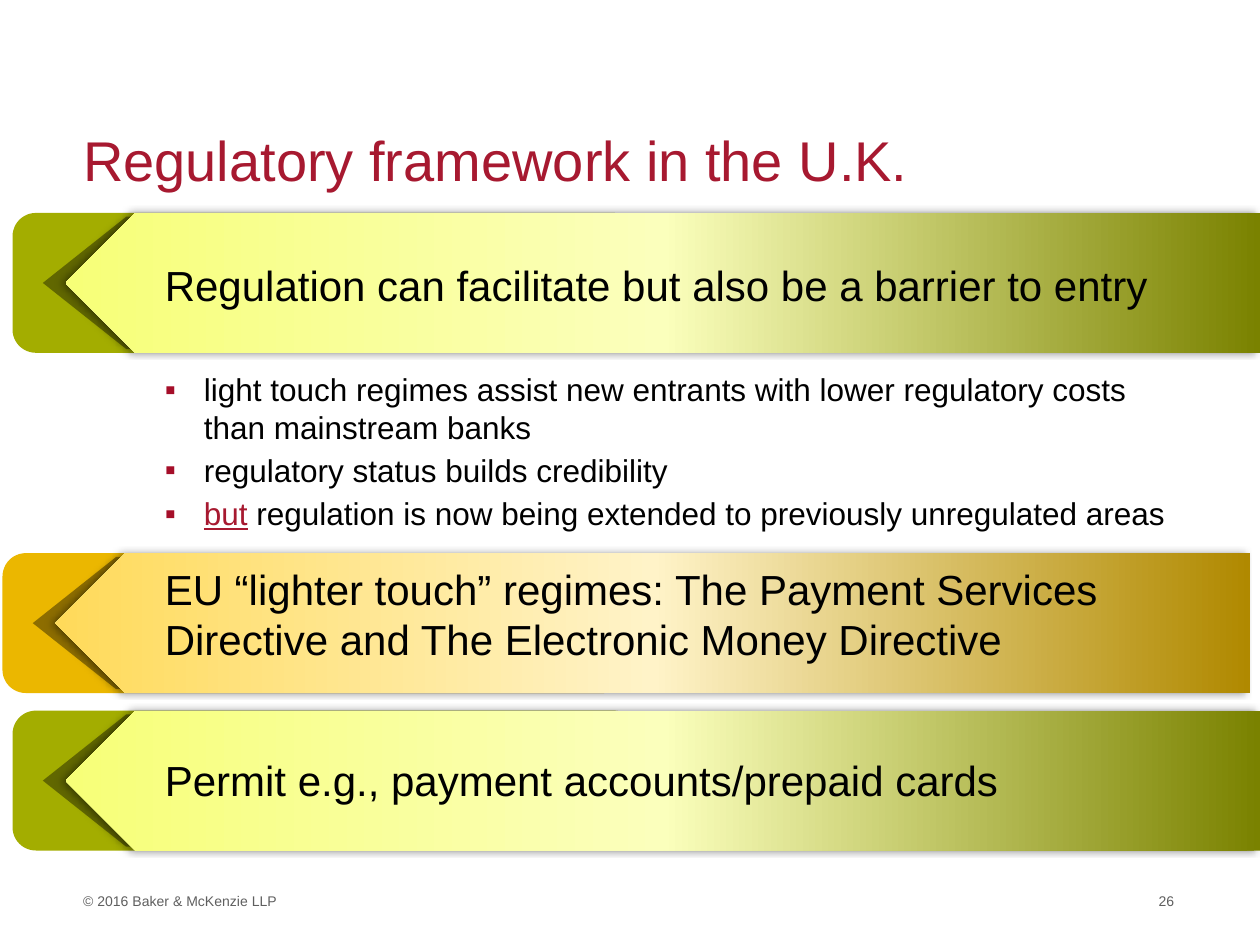
"""Builds the slide on the regulatory framework in the U.K."""
from copy import deepcopy
from dataclasses import dataclass
from typing import NamedTuple

from lxml.etree import SubElement
from pptx import Presentation
from pptx.dml.color import RGBColor
from pptx.enum.shapes import MSO_SHAPE as Shape
from pptx.enum.text import MSO_ANCHOR as Anchor, PP_ALIGN as Align
from pptx.oxml.ns import qn
from pptx.util import Emu, Inches, Pt

BLACK = RGBColor(0x00, 0x00, 0x00)
GREY = RGBColor(0x5F, 0x5F, 0x5F)
RED = RGBColor(0xA7, 0x19, 0x30)
BULLET_RED = RGBColor(0xA5, 0x0E, 0x29)
OLIVE = RGBColor(0xA3, 0xAD, 0x00)
OLIVE_FADE = (RGBColor(0x7A, 0x82, 0x00), RGBColor(0xFB, 0xFF, 0xBC), RGBColor(0xF7, 0xFF, 0x78))
GOLD = RGBColor(0xEB, 0xB7, 0x00)
GOLD_FADE = (RGBColor(0xB0, 0x89, 0x00), RGBColor(0xFF, 0xF3, 0xC8), RGBColor(0xFF, 0xDA, 0x5A))

COLS, ROWS = 100, 75
WIDTH, HEIGHT = Inches(10), Inches(7.5)
INSET = Inches(0.1), Inches(0.05)
BAND_ROWS = 11.1


class Box(NamedTuple):
    """A place on the grid, in columns and rows."""
    col: float
    row: float
    cols: float
    rows: float

    def emu(self) -> list[Emu]:
        """Return left, top, width and height."""
        units = (WIDTH / COLS, HEIGHT / ROWS) * 2
        return [Emu(round(n * unit)) for n, unit in zip(self, units)]


@dataclass
class Banner:
    """An arrow band with its heading."""
    col: float
    row: float
    text: str
    text_row: float
    text_rows: float
    base: RGBColor
    fade: tuple


BANNERS = [
    Banner(1, 16.9, "Regulation can facilitate but also be a barrier to entry",
           20.1, 5, OLIVE, OLIVE_FADE),
    Banner(0.2, 43.9, "EU “lighter touch” regimes: The Payment Services Directive "
           "and The Electronic Money Directive", 44.2, 9.1, GOLD, GOLD_FADE),
    Banner(1, 56.4, "Permit e.g., payment accounts/prepaid cards",
           59.4, 5, OLIVE, OLIVE_FADE),
]
BULLETS = [
    [("light touch regimes assist new entrants with lower regulatory costs "
      "than mainstream banks", {})],
    [("regulatory status builds credibility", {})],
    [("but", {"color": RED, "underline": True}),
     (" regulation is now being extended to previously unregulated areas", {})],
]


def set_all(obj, values: dict) -> None:
    """Set each named attribute of an object."""
    for name, value in values.items():
        setattr(obj, name, value)


def set_frame(tf, inset=INSET, anchor=Anchor.TOP) -> None:
    """Set wrapping, anchor and margins of a text frame."""
    x, y = inset
    set_all(tf, {"word_wrap": True, "vertical_anchor": anchor, "margin_left": x,
                 "margin_right": x, "margin_top": y, "margin_bottom": y})


def add_run(p, text: str, size: float, color=BLACK, **values) -> None:
    """Add a formatted run to a paragraph."""
    r = p.add_run()
    r.text = text
    set_all(r.font, {"name": "Arial", "size": Pt(size), **values})
    r.font.color.rgb = color


def add_text(slide, box: Box, text: str, size: float, color=BLACK,
             inset=INSET, align=Align.LEFT) -> None:
    """Add a text box with one paragraph."""
    tf = slide.shapes.add_textbox(*box.emu()).text_frame
    set_frame(tf, inset)
    p = tf.paragraphs[0]
    p.alignment = align
    add_run(p, text, size, color)


def add_bullets(slide, box: Box) -> None:
    """Add the bulleted list."""
    tf = slide.shapes.add_textbox(*box.emu()).text_frame
    set_frame(tf)
    for i, runs in enumerate(BULLETS):
        p = tf.add_paragraph() if i else tf.paragraphs[0]
        pPr = p._p.get_or_add_pPr()
        pPr.set("marL", str(Inches(0.31)))
        pPr.set("indent", str(Inches(-0.31)))
        clr = SubElement(pPr, qn("a:buClr"))
        SubElement(clr, qn("a:srgbClr"), val=str(BULLET_RED))
        SubElement(pPr, qn("a:buFont"), typeface="Arial")
        SubElement(pPr, qn("a:buChar"), char="▪")
        p.space_before = Pt(3 if i else 0)
        for text, values in runs:
            add_run(p, text, 18, **values)


def add_part(group, kind, box: Box, color: RGBColor, rotation: float = 0):
    """Add a plain filled shape to a group."""
    sp = group.shapes.add_shape(kind, *box.emu())
    sp.rotation = rotation
    sp.shadow.inherit = False
    sp.fill.solid()
    sp.fill.fore_color.rgb = color
    sp.line.fill.background()
    return sp


def set_alpha(color_parent, percent: int) -> None:
    """Set the opacity of the colour below an element."""
    clr = color_parent.find(".//" + qn("a:srgbClr"))
    SubElement(clr, qn("a:alpha"), val=str(percent * 1000))


def set_fade(sp, colors: tuple) -> None:
    """Fill a shape with evenly spaced gradient stops."""
    sp.fill.gradient()
    sp.fill.gradient_angle = 0
    stops = sp._element.spPr.find(".//" + qn("a:gsLst"))
    stops.append(deepcopy(stops[0]))
    for i, (stop, color) in enumerate(zip(sp.fill.gradient_stops, colors)):
        stop.position = i / (len(colors) - 1)
        stop.color.rgb = color


def set_shadow(sp) -> None:
    """Give a shape a soft shadow."""
    effects = sp._element.spPr.find(qn("a:effectLst"))
    shadow = SubElement(effects, qn("a:outerShdw"), blurRad=str(Pt(4)),
                        dist=str(Pt(3)), dir=str(180 * 60000), rotWithShape="0")
    SubElement(shadow, qn("a:srgbClr"), val=str(BLACK))
    set_alpha(shadow, 40)


def add_banner(slide, b: Banner) -> None:
    """Draw the grouped band and its heading."""
    group = slide.shapes.add_group_shape()
    add_part(group, Shape.ROUNDED_RECTANGLE, Box(b.col, b.row, 49.6, BAND_ROWS), b.base)
    notch = add_part(group, Shape.PENTAGON, Box(b.col + 2.4, b.row + 0.3, 24.4, 10.5), BLACK, 180)
    notch.adjustments[0] = 0.63
    set_alpha(notch._element.spPr, 40)
    band = add_part(group, Shape.PENTAGON, Box(b.col + 4.2, b.row, 94.8, BAND_ROWS), b.base, 180)
    set_fade(band, b.fade)
    set_shadow(band)
    add_text(slide, Box(12.1, b.text_row, 84.4, b.text_rows), b.text, 24)


def main() -> None:
    """Build and save the slide."""
    prs = Presentation()
    set_all(prs, {"slide_width": WIDTH, "slide_height": HEIGHT})
    s = prs.slides.add_slide(prs.slide_layouts[5])
    title = s.shapes.title
    set_all(title, dict(zip(("left", "top", "width", "height"), Box(6.6, 9.9, 86.6, 5.4).emu())))
    set_frame(title.text_frame, (0, 0), Anchor.MIDDLE)
    p = title.text_frame.paragraphs[0]
    p.alignment = Align.LEFT
    add_run(p, "Regulatory framework in the U.K.", 32, RED)
    for b in BANNERS:
        add_banner(s, b)
    add_bullets(s, Box(12.1, 28.9, 83.5, 14))
    add_text(s, Box(6.6, 70.8, 78.7, 1.3), "© 2016 Baker & McKenzie LLP", 8, GREY, (0, 0))
    add_text(s, Box(85.8, 70.8, 7.4, 2), "26", 8, GREY, (0, 0), Align.RIGHT)
    prs.save("out.pptx")


if __name__ == "__main__":
    main()
